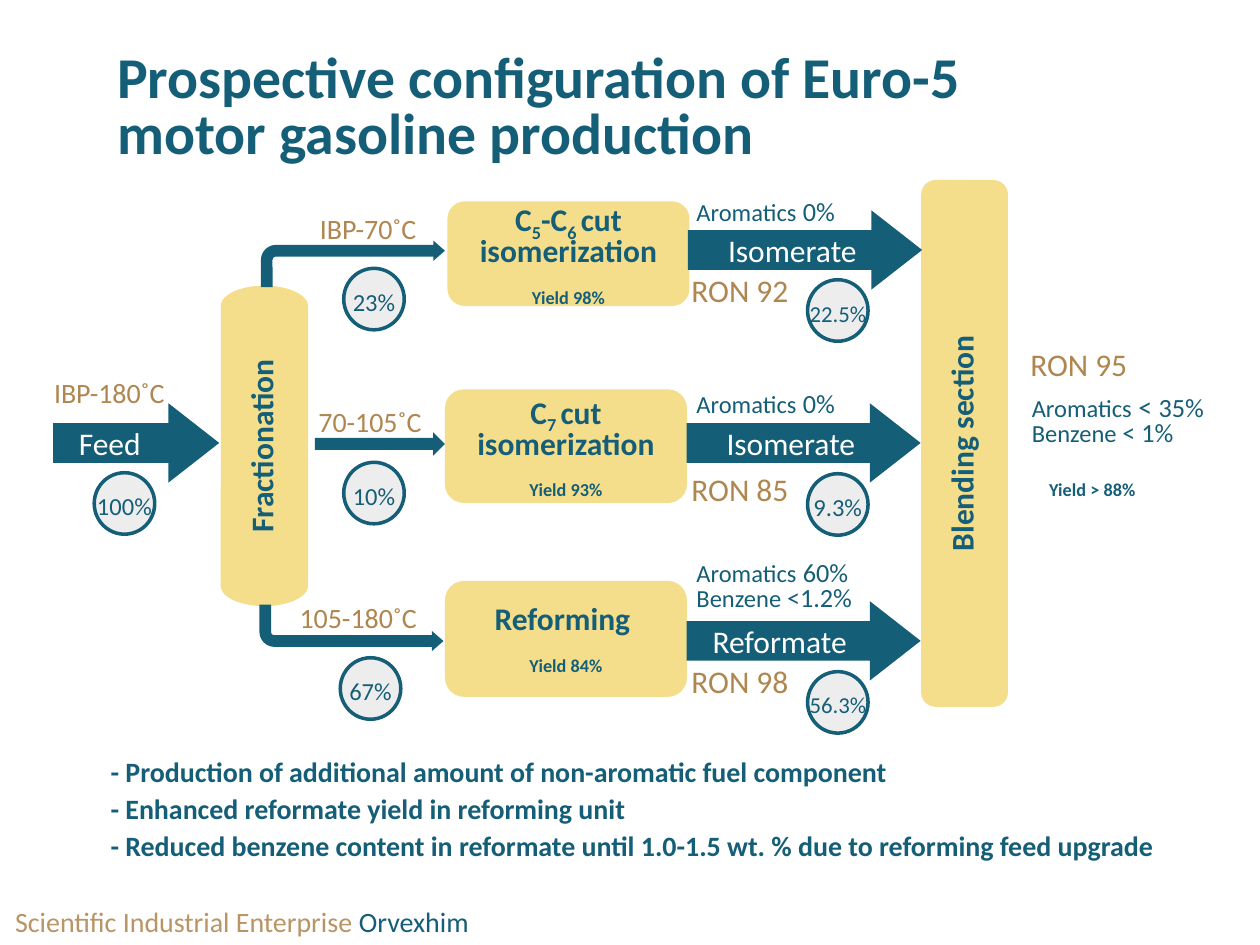
import math

import pptx
import pptx.dml.color
import pptx.enum.shapes
import pptx.enum.text
import pptx.util
from pptx.util import Cm

COLORS = {"teal": "155E77", "sand": "F4DE8C", "brown": "AF864F",
          "tan": "B99464", "gray": "EDEDED", "white": "FFFFFF"}
SHAPES = pptx.enum.shapes.MSO_SHAPE
LEFT, CENTER, RIGHT = (pptx.enum.text.PP_ALIGN.LEFT, pptx.enum.text.PP_ALIGN.CENTER,
                       pptx.enum.text.PP_ALIGN.RIGHT)
TOP, MIDDLE = pptx.enum.text.MSO_ANCHOR.TOP, pptx.enum.text.MSO_ANCHOR.MIDDLE


def rgb(name):
    return pptx.dml.color.RGBColor.from_string(COLORS[name])


def write(shape, paragraphs, size, color, bold=False, align=LEFT, spacing=None,
          anchor=TOP, wrap=False, before=0):
    """Each paragraph is a list of (text, overrides) runs."""
    frame = shape.text_frame
    frame.word_wrap = wrap
    frame.vertical_anchor = anchor
    for index, runs in enumerate(paragraphs):
        paragraph = frame.add_paragraph() if index else frame.paragraphs[0]
        paragraph.alignment = align
        paragraph.line_spacing = spacing
        if index and before:
            paragraph.space_before = pptx.util.Pt(before)
        paragraph.font.name = "Calibri"
        paragraph.font.size = pptx.util.Pt(size)
        paragraph.font.bold = bold
        paragraph.font.color.rgb = rgb(color)
        for text, overrides in runs:
            run = paragraph.add_run()
            run.text = text
            if "size" in overrides:
                run.font.size = pptx.util.Pt(overrides["size"])
            if "color" in overrides:
                run.font.color.rgb = rgb(overrides["color"])
            if "sub" in overrides:
                run._r.get_or_add_rPr().set("baseline", "-25000")


presentation = pptx.Presentation()
presentation.slide_width, presentation.slide_height = Cm(25.4), Cm(19.05)
slide = presentation.slides.add_slide(presentation.slide_layouts[5])
shapes = slide.shapes
SUB = {"sub": True}

# Title
title = shapes.title
title.left, title.top, title.width, title.height = Cm(2.11), Cm(0.97), Cm(22.17), Cm(2.54)
write(title, [[("Prospective configuration of Euro-5", {})], [("motor gasoline production", {})]],
      33, "teal", bold=True, spacing=0.8, wrap=True)

# Fractionation column: two half ellipses joined by straight sides
center_x, half_width, cap_height = 5.33, 0.88, 0.41
cap_top, cap_bottom = 6.17, 11.81
outline = []
for degrees in range(0, 361, 5):
    angle = math.radians(degrees)
    base = cap_bottom if degrees <= 180 else cap_top
    outline.append((Cm(center_x + half_width * math.cos(angle)),
                    Cm(base + cap_height * math.sin(angle))))
builder = shapes.build_freeform(*outline[0])
builder.add_line_segments(outline[1:], close=True)
column = builder.convert_to_shape()

# Blending section
blending = shapes.add_shape(SHAPES.ROUNDED_RECTANGLE, Cm(18.57), Cm(3.63), Cm(1.75), Cm(10.62))
for shape, label in ((column, "Fractionation"), (blending, "Blending section")):
    write(shape, [[(label, {})]], 18, "teal", bold=True, align=CENTER, spacing=0.8, anchor=MIDDLE)
    shape.text_frame._txBody.bodyPr.set("vert", "vert270")
sand_shapes = [column, blending]

# Process units
units = [
    (9.02, 4.06, 2.11, [("С", {}), ("5", SUB), ("-С", {}), ("6 ", SUB),
                        ("cut isomerization", {})], "Yield 98%"),
    (8.97, 7.85, 2.29, [("С", {}), ("7 ", SUB), ("cut isomerization", {})], "Yield 93%"),
    (8.97, 11.71, 2.34, [("Reforming ", {})], "Yield 84%"),
]
for left, top, height, name, unit_yield in units:
    unit = shapes.add_shape(SHAPES.ROUNDED_RECTANGLE, Cm(left), Cm(top), Cm(4.88), Cm(height))
    write(unit, [name, [(unit_yield, SUB)]], 18, "teal", bold=True, align=CENTER,
          spacing=0.8, anchor=MIDDLE, wrap=True)
    sand_shapes.append(unit)

# Thin arrows from the column to the units
teal_shapes = []
for left, top, flipped in ((5.26, 4.85, False), (5.23, 12.19, True)):
    bent = shapes.add_shape(SHAPES.BENT_ARROW, Cm(left), Cm(top), Cm(3.71), Cm(0.94))
    for index, value in enumerate((0.25, 0.219, 0.25, 0.323)):
        bent.adjustments[index] = value
    if flipped:
        bent._element.spPr.get_or_add_xfrm().set("flipV", "1")
    teal_shapes.append(bent)
teal_shapes.append(shapes.add_shape(SHAPES.RIGHT_ARROW, Cm(6.35), Cm(8.71), Cm(2.62), Cm(0.48)))

# Block arrows with stream names
streams = [(1.07, 8.13, 3.35, "Feed", 0.8), (13.87, 4.24, 4.72, "Isomerate", 0.25),
           (13.84, 8.13, 4.72, "Isomerate", 0.25), (13.84, 12.12, 4.72, "Reformate", 0.7)]
for left, top, width, label, right_margin in streams:
    arrow = shapes.add_shape(SHAPES.RIGHT_ARROW, Cm(left), Cm(top), Cm(width), Cm(1.6))
    arrow.adjustments[1] = 0.64
    write(arrow, [[(label, {})]], 18, "white", align=CENTER, anchor=MIDDLE)
    arrow.text_frame.margin_right = Cm(right_margin)
    arrow.text_frame.margin_top = arrow.text_frame.margin_bottom = 0
    teal_shapes.append(arrow)

for color, group in (("sand", sand_shapes), ("teal", teal_shapes)):
    for shape in group:
        shape.shadow.inherit = False
        shape.fill.solid()
        shape.fill.fore_color.rgb = rgb(color)
        shape.line.fill.background()

# Share circles
shares = [(1.9, 9.53, "100%", 14), (6.93, 5.41, "23%", 14), (6.93, 9.32, "10%", 14),
          (6.86, 13.26, "67%", 14), (16.28, 5.64, "22.5%", 13), (16.28, 9.55, "9.3%", 14),
          (16.28, 13.54, "56.3%", 13)]
for left, top, label, size in shares:
    circle = shapes.add_shape(SHAPES.FLOWCHART_CONNECTOR, Cm(left), Cm(top), Cm(1.22), Cm(1.24))
    circle.shadow.inherit = False
    circle.fill.solid()
    circle.fill.fore_color.rgb = rgb("gray")
    circle.line.color.rgb = rgb("teal")
    circle.line.width = pptx.util.Pt(2)
    write(circle, [[(label, {})]], size, "teal", align=CENTER, anchor=MIDDLE)
    frame = circle.text_frame
    frame.margin_left = frame.margin_right = frame.margin_bottom = 0
    frame.margin_top = Cm(0.1)

# Cut ranges and octane numbers
brown_labels = [
    (0.84, 7.44, 2.79, "IBP-180˚C", 16), (6.2, 4.14, 2.49, "IBP-70˚C", 16),
    (6.17, 8.03, 2.62, "70-105˚C", 16), (5.79, 11.99, 2.92, "105-180˚C", 16),
    (13.69, 5.33, 2.49, "RON 92", 18), (13.69, 9.35, 2.49, "RON 85", 18),
    (13.69, 13.23, 2.49, "RON 98", 18), (20.52, 6.83, 2.49, "RON 95", 18),
]
for left, top, width, label, size in brown_labels:
    box = shapes.add_textbox(Cm(left), Cm(top), Cm(width), Cm(0.94 if size == 16 else 1.02))
    write(box, [[(label, {})]], size, "brown")

# Aromatics and benzene contents
contents = [
    (13.79, 3.78, 3.33, 0.94, " ", "0%", None),
    (13.79, 7.65, 3.33, 0.94, " ", "0%", None),
    (13.79, 11.18, 3.68, 1.32, " ", "60%", "<1.2%"),
    (20.55, 7.85, 4.34, 1.37, " < ", "35%", "< 1%"),
]
for left, top, width, height, sign, aromatics, benzene in contents:
    box = shapes.add_textbox(Cm(left), Cm(top), Cm(width), Cm(height))
    lines = [[("Aromatics", {}), (sign, {"size": 16}), (aromatics, {"size": 15})]]
    if benzene:
        lines.append([("Benzene ", {}), (benzene, {"size": 15})])
    write(box, lines, 14, "teal", spacing=0.8 if benzene else None)

# Total yield
box = shapes.add_textbox(Cm(20.75), Cm(9.17), Cm(2.54), Cm(0.69))
write(box, [[("Yield > 88%", SUB)]], 18, "teal", bold=True, align=CENTER, spacing=0.8)

# Conclusions
box = shapes.add_textbox(Cm(1.98), Cm(15.21), Cm(23.19), Cm(2.34))
conclusions = [
    "- Production of additional amount of non-aromatic fuel component",
    "- Enhanced reformate yield in reforming unit",
    "- Reduced benzene content in reformate until 1.0-1.5 wt. % due to reforming feed upgrade",
]
write(box, [[(text, {})] for text in conclusions], 16, "teal", bold=True,
      spacing=0.8, wrap=True, before=6)

# Footer
box = shapes.add_textbox(Cm(0), Cm(18.11), Cm(9.7), Cm(0.94))
write(box, [[("Scientific Industrial Enterprise ", {}), ("Orvexhim", {"color": "teal"})]],
      16, "tan", align=RIGHT)

presentation.save("out.pptx")
